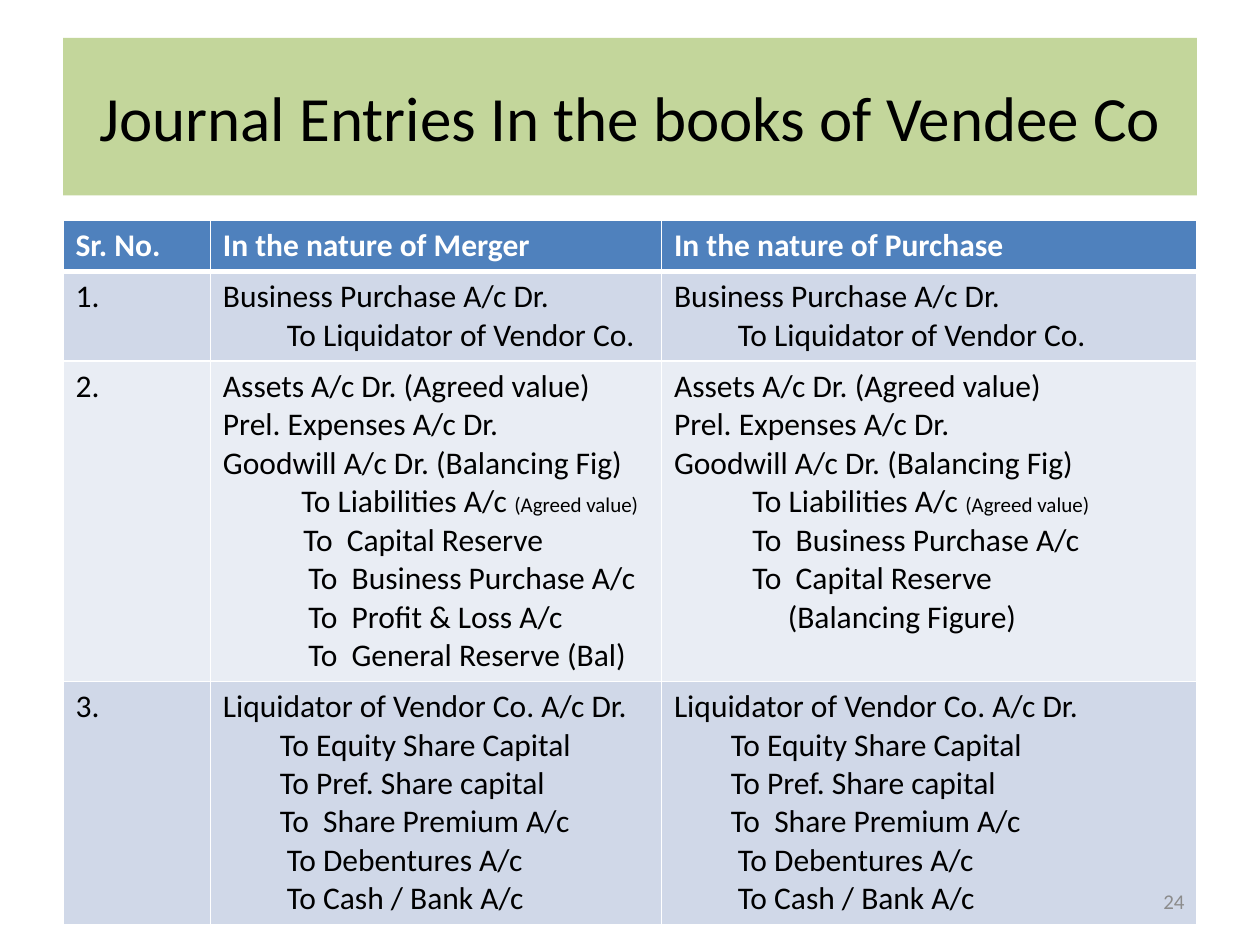
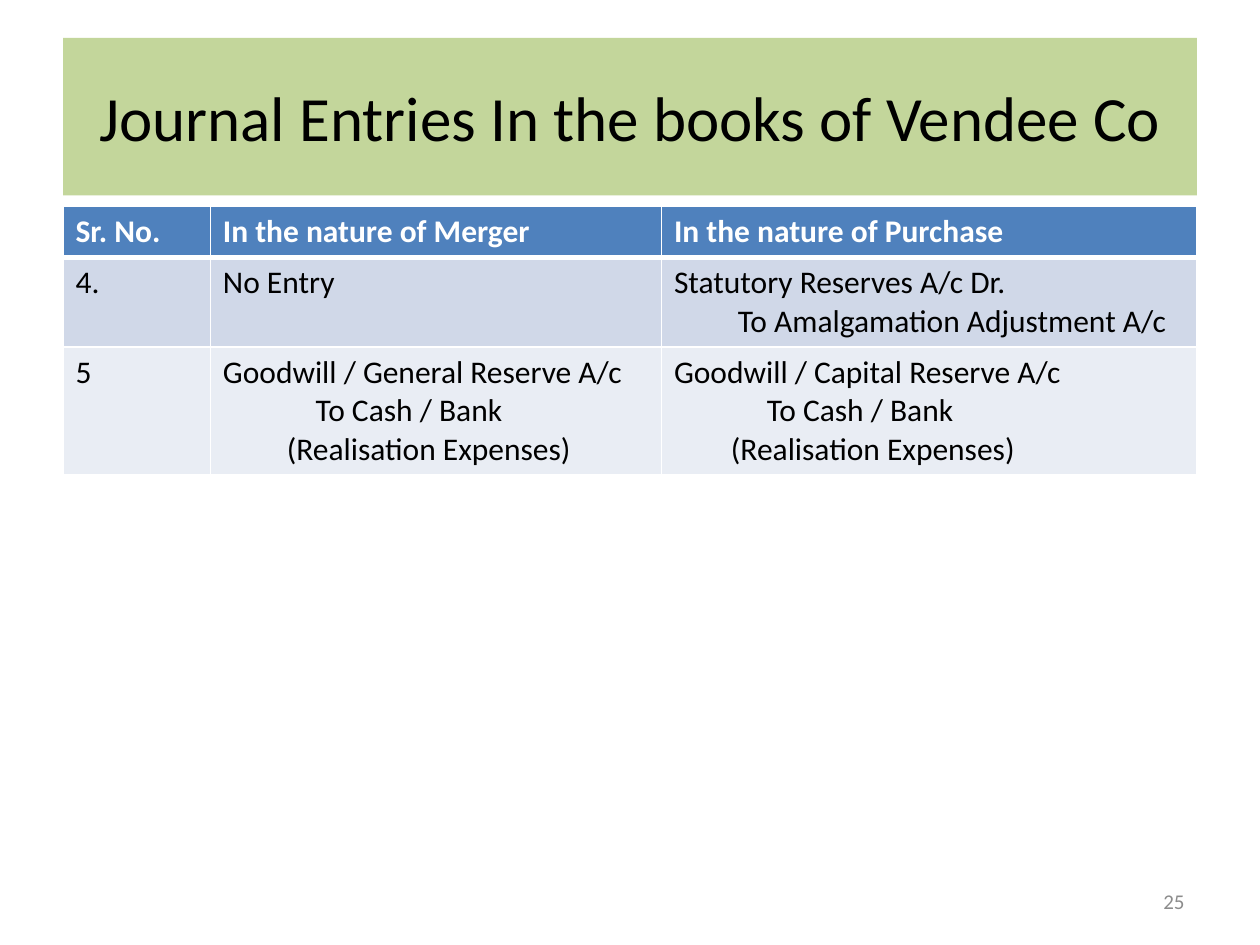
"""Build two slides of journal entries in the books of the vendee company."""
from pptx import Presentation
from pptx.dml.color import RGBColor
from pptx.enum import text
from pptx.oxml import parse_xml
from pptx.oxml.ns import nsdecls
from pptx.util import Pt

FONT = "Calibri"
GREEN = RGBColor(0xC3, 0xD6, 0x9B)
BLUE = RGBColor(0x4F, 0x81, 0xBD)
BANDS = RGBColor(0xD0, 0xD8, 0xE8), RGBColor(0xE9, 0xED, 0xF4)
BLACK = RGBColor(0, 0, 0)
WHITE = RGBColor(255, 255, 255)
GREY = RGBColor(0x8C, 0x8C, 0x8C)

TITLE = "Journal Entries In the books of Vendee Co"
HEAD = ["Sr. No."], ["In the nature of Merger"], ["In the nature of Purchase"]
WIDTHS = 84.24, 257.76, 306
LEFT, WIDE = 36, 648
SIZE, SMALL = 18, 12
LINE, PAD = 21.97, 7.2

BUY = ["Business Purchase A/c Dr.", (36.5, "To Liquidator of Vendor Co.")]
ASSETS = [
    "Assets A/c Dr. (Agreed value)",
    "Prel. Expenses A/c Dr.",
    "Goodwill A/c Dr. (Balancing Fig)",
    (44.75, "To Liabilities A/c ", "(Agreed value)"),
]
PAY = [
    "Liquidator of Vendor Co. A/c Dr.",
    (32.5, "To Equity Share Capital"),
    (32.5, "To Pref. Share capital"),
    (32.5, "To  Share Premium A/c"),
    (36.5, "To Debentures A/c"),
    (36.5, "To Cash / Bank A/c"),
]
MERGER = ASSETS + [
    (46, "To  Capital Reserve"),
    (48.75, "To  Business Purchase A/c"),
    (48.75, "To  Profit & Loss A/c"),
    (48.75, "To  General Reserve (Bal)"),
]
PURCHASE = ASSETS + [
    (44.75, "To  Business Purchase A/c"),
    (44.75, "To  Capital Reserve"),
    (65, "(Balancing Figure)"),
]
STATUTORY = ["Statutory Reserves A/c Dr.", (36.5, "To Amalgamation Adjustment A/c")]
CASH = (53, "To Cash / Bank")
COSTS = "(Realisation Expenses)"

SLIDES = [
    (24, 126, [(["1."], BUY, BUY), (["2."], MERGER, PURCHASE), (["3."], PAY, PAY)]),
    (25, 118, [
        (["4."], ["No Entry"], STATUTORY),
        (["5"],
         ["Goodwill / General Reserve A/c", CASH, (36.5, COSTS)],
         ["Goodwill / Capital Reserve A/c", CASH, (32.5, COSTS)]),
    ]),
]


def style(para, size, color, align=text.PP_ALIGN.LEFT, bold=False):
    font = para.font
    font.name, font.size, font.bold = FONT, Pt(size), bold
    font.color.rgb = color
    para.alignment = align


def edge(cell, side, width):
    cell._tc.get_or_add_tcPr().append(parse_xml(
        f'<a:ln{side} {nsdecls("a")} w="{Pt(width)}"><a:solidFill>'
        f'<a:srgbClr val="{WHITE}"/></a:solidFill></a:ln{side}>'))


def fill_cell(cell, lines, row):
    head = row == 0
    for side in "LRTB":
        thick = (row, side) in [(0, "B"), (1, "T")]
        edge(cell, side, 3 if thick else 1)
    cell.fill.solid()
    cell.fill.fore_color.rgb = BLUE if head else BANDS[(row - 1) % 2]
    frame = cell.text_frame
    for num, line in enumerate(lines):
        indent, *parts = (0, line) if isinstance(line, str) else line
        para = frame.add_paragraph() if num else frame.paragraphs[0]
        style(para, SIZE, WHITE if head else BLACK, bold=head)
        if indent:
            para._p.get_or_add_pPr().set("marL", str(Pt(indent)))
        for part, size in zip(parts, (SIZE, SMALL)):
            run = para.add_run()
            run.text = part
            if size != SIZE:
                run.font.size = Pt(size)


def add_title(slide):
    title = slide.shapes.title
    title.left, title.top, title.width, title.height = map(Pt, (LEFT, 21.6, WIDE, 90))
    title.fill.solid()
    title.fill.fore_color.rgb = GREEN
    frame = title.text_frame
    frame.text = TITLE
    frame.auto_size = text.MSO_AUTO_SIZE.NONE
    frame.vertical_anchor = text.MSO_ANCHOR.MIDDLE
    style(frame.paragraphs[0], 36, BLACK, text.PP_ALIGN.CENTER)


def add_entries(slide, top, body):
    rows = [HEAD, *body]
    highs = [LINE * max(map(len, row)) + PAD for row in rows]
    table = slide.shapes.add_table(
        len(rows), len(WIDTHS), Pt(LEFT), Pt(top), Pt(WIDE), Pt(sum(highs))).table
    for col, width in zip(table.columns, WIDTHS):
        col.width = Pt(width)
    for num, (row, high) in enumerate(zip(rows, highs)):
        table.rows[num].height = Pt(high)
        for col, lines in enumerate(row):
            fill_cell(table.cell(num, col), lines, num)


def add_number(slide, number):
    frame = slide.shapes.add_textbox(*map(Pt, (516, 500.5, 168, 28.75))).text_frame
    frame.word_wrap = True
    frame.vertical_anchor = text.MSO_ANCHOR.MIDDLE
    frame.text = str(number)
    style(frame.paragraphs[0], 12, GREY, text.PP_ALIGN.RIGHT)


deck = Presentation()
deck.slide_width, deck.slide_height = Pt(720), Pt(540)
for number, top, body in SLIDES:
    slide = deck.slides.add_slide(deck.slide_layouts[5])
    add_title(slide)
    add_entries(slide, top, body)
    add_number(slide, number)
deck.save("out.pptx")
